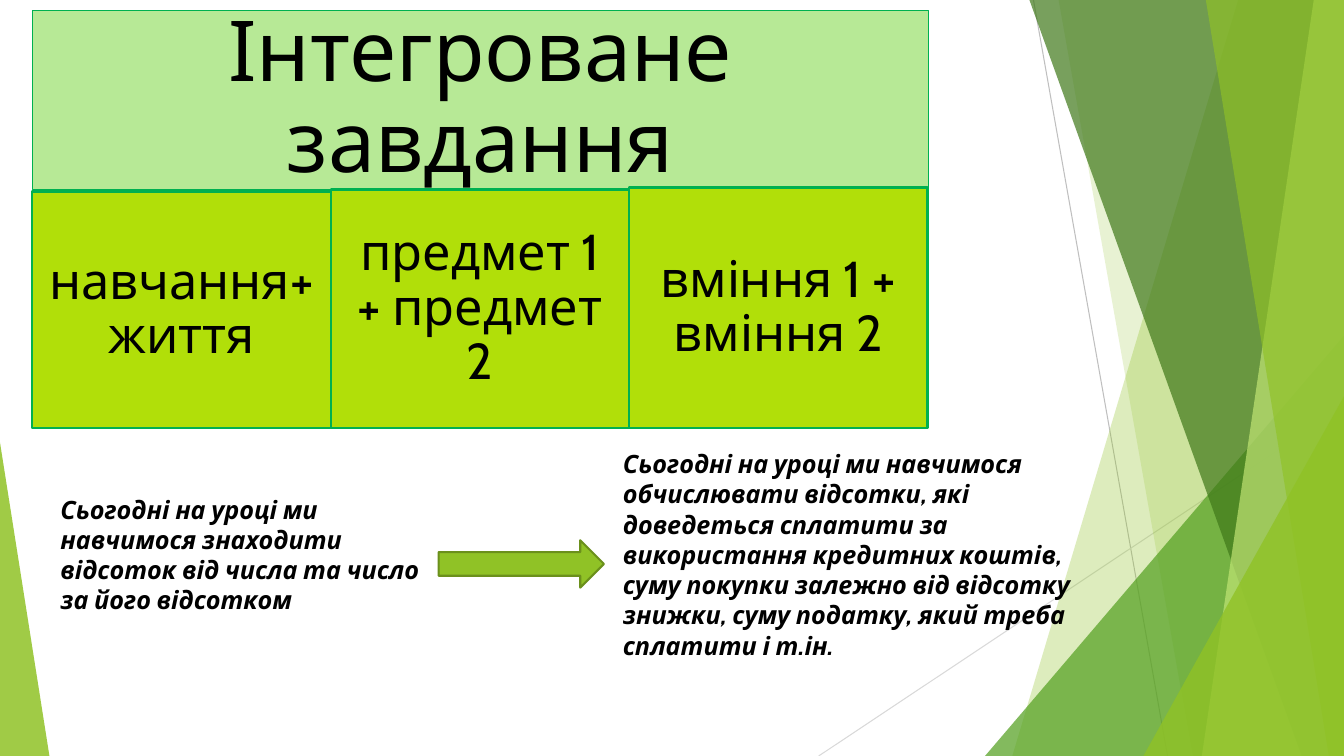
from dataclasses import dataclass

from lxml.etree import SubElement
from pptx import Presentation
from pptx.dml.color import RGBColor
from pptx.enum.shapes import MSO_CONNECTOR as Connector, MSO_SHAPE as Preset
from pptx.enum.text import MSO_ANCHOR as Anchor, MSO_AUTO_SIZE as AutoSize, PP_ALIGN as Align
from pptx.oxml.ns import qn
from pptx.shapes.autoshape import Shape
from pptx.slide import Slide
from pptx.util import Pt

PX = 9144  # EMU in one px, 100 px to the inch
WIDTH, HEIGHT = 1333, 750
FONT = "Cabin"

BLACK = RGBColor(0x00, 0x00, 0x00)
LEAF = RGBColor(0x90, 0xC2, 0x26)
GRASS = RGBColor(0x54, 0xA0, 0x21)
FOREST = RGBColor(0x3F, 0x78, 0x19)
LIME = RGBColor(0xC0, 0xE4, 0x74)
OLIVE = RGBColor(0x6B, 0x90, 0x1C)
MINT = RGBColor(0xB7, 0xE9, 0x96)
CELL = RGBColor(0xB1, 0xDF, 0x09)
BORDER = RGBColor(0x00, 0xB0, 0x50)
GRAY = RGBColor(0xBF, 0xBF, 0xBF)
PALE_GRAY = RGBColor(0xD9, 0xD9, 0xD9)


@dataclass(frozen=True)
class Box:
    left: int
    top: int
    width: int
    height: int

    def emu(self) -> tuple[int, int, int, int]:
        return self.left * PX, self.top * PX, self.width * PX, self.height * PX


@dataclass(frozen=True)
class Ray:
    start: tuple[int, int]
    end: tuple[int, int]
    color: RGBColor


@dataclass(frozen=True)
class Band:
    """Strip reaching the right edge of the page, slanted on its left side."""
    top_x: int
    bottom_x: int
    color: RGBColor
    opacity: int


@dataclass(frozen=True)
class Wedge:
    """Right triangle; apex is 0 for the left side, 1 for the right side."""
    box: Box
    apex: int
    color: RGBColor
    opacity: int


@dataclass(frozen=True)
class Note:
    box: Box
    text: str


RAYS = [
    Ray((1025, 0), (1158, HEIGHT), GRAY),
    Ray((WIDTH, 403), (812, HEIGHT), PALE_GRAY),
]
FACETS = [
    Band(1228, 1004, LEAF, 30),
    Band(1050, 1183, LEAF, 20),
    Wedge(Box(977, 333, 356, 417), 1, GRASS, 72),
    Band(1021, 1291, FOREST, 70),
    Band(1303, 1192, LIME, 70),
    Band(1196, 1318, LEAF, 65),
    Wedge(Box(1134, 393, 199, 357), 1, LEAF, 80),
    Wedge(Box(0, 439, 49, 311), 0, LEAF, 85),
]
TITLE_BOX = Box(32, 10, 889, 178)
PAIRS = ["навчання+ життя", "предмет 1 + предмет 2", "вміння 1 + вміння 2"]
CELL_WIDTH, CELL_TOP, CELL_BOTTOM, CELL_STEP = 296, 190, 425, 2
NOTES = [
    Note(Box(50, 485, 398, 131),
         "Сьогодні на уроці ми навчимося знаходити відсоток від числа та число за його відсотком"),
    Note(Box(608, 440, 474, 222),
         "Сьогодні на уроці ми навчимося обчислювати відсотки, які доведеться сплатити "
         "за використання кредитних коштів, суму покупки залежно від відсотку знижки, "
         "суму податку, який треба сплатити і т.ін."),
]
ARROW_BOX = Box(435, 536, 164, 47)


def paint(shape: Shape, color: RGBColor, opacity: int = 100) -> None:
    shape.shadow.inherit = False
    shape.fill.solid()
    shape.fill.fore_color.rgb = color
    if opacity < 100:
        tint = shape.fill._xPr.find(qn("a:solidFill"))[0]
        SubElement(tint, qn("a:alpha")).set("val", str(opacity * 1000))


def outline(shape: Shape, color: RGBColor, width: float) -> None:
    shape.line.color.rgb = color
    shape.line.width = Pt(width)


def add_ray(page: Slide, ray: Ray) -> None:
    ends = [value * PX for value in ray.start + ray.end]
    line = page.shapes.add_connector(Connector.STRAIGHT, *ends)
    line.line.color.rgb = ray.color
    line.line.width = Pt(0.75)
    SubElement(line._element.spPr, qn("a:effectLst"))


def add_facet(page: Slide, facet: Band | Wedge) -> None:
    if isinstance(facet, Band):
        builder = page.shapes.build_freeform(facet.top_x, 0, scale=PX)
        builder.add_line_segments([(WIDTH, 0), (WIDTH, HEIGHT), (facet.bottom_x, HEIGHT)])
        shape = builder.convert_to_shape()
    else:
        shape = page.shapes.add_shape(Preset.ISOSCELES_TRIANGLE, *facet.box.emu())
        shape.adjustments[0] = facet.apex
    paint(shape, facet.color, facet.opacity)
    shape.line.fill.background()


def write(shape: Shape, text: str, size: int, bold: bool = False, italic: bool = False) -> None:
    frame = shape.text_frame
    frame.text = text
    frame.word_wrap = True
    for span in frame.paragraphs[0].runs:
        span.font.name = FONT
        span.font.size = Pt(size)
        span.font.bold = bold
        span.font.italic = italic
        span.font.color.rgb = BLACK


def center(shape: Shape, inset: int) -> None:
    frame = shape.text_frame
    frame.auto_size = AutoSize.NONE
    frame.vertical_anchor = Anchor.MIDDLE
    frame.margin_left = frame.margin_right = inset * PX
    frame.margin_top = frame.margin_bottom = inset * PX
    para = frame.paragraphs[0]
    para.alignment = Align.CENTER
    para.line_spacing = 0.9


def add_title(page: Slide) -> None:
    title = page.shapes.title
    title.left, title.top, title.width, title.height = TITLE_BOX.emu()
    paint(title, MINT)
    outline(title, BORDER, 0.75)
    write(title, "Інтегроване завдання", 60)
    center(title, 25)


def add_cell(page: Slide, index: int, text: str) -> None:
    top = CELL_TOP - index * CELL_STEP
    box = Box(TITLE_BOX.left + index * CELL_WIDTH, top, CELL_WIDTH, CELL_BOTTOM - top)
    cell = page.shapes.add_shape(Preset.RECTANGLE, *box.emu())
    paint(cell, CELL)
    outline(cell, BORDER, 1.5)
    write(cell, text, 36)
    center(cell, 15)


def add_note(page: Slide, note: Note) -> None:
    box = page.shapes.add_textbox(*note.box.emu())
    write(box, note.text, 18, bold=True, italic=True)
    box.text_frame.auto_size = AutoSize.SHAPE_TO_FIT_TEXT


def main() -> None:
    deck = Presentation()
    deck.slide_width, deck.slide_height = WIDTH * PX, HEIGHT * PX
    page = deck.slides.add_slide(deck.slide_layouts.get_by_name("Title Only"))

    # Green facets at the page edges
    for ray in RAYS:
        add_ray(page, ray)
    for facet in FACETS:
        add_facet(page, facet)

    # Title over three combined pairs
    add_title(page)
    for index, text in enumerate(PAIRS):
        add_cell(page, index, text)

    # Lesson goal before and after
    for note in NOTES:
        add_note(page, note)
    arrow = page.shapes.add_shape(Preset.RIGHT_ARROW, *ARROW_BOX.emu())
    paint(arrow, LEAF)
    outline(arrow, OLIVE, 1.5)

    deck.save("out.pptx")


if __name__ == "__main__":
    main()
